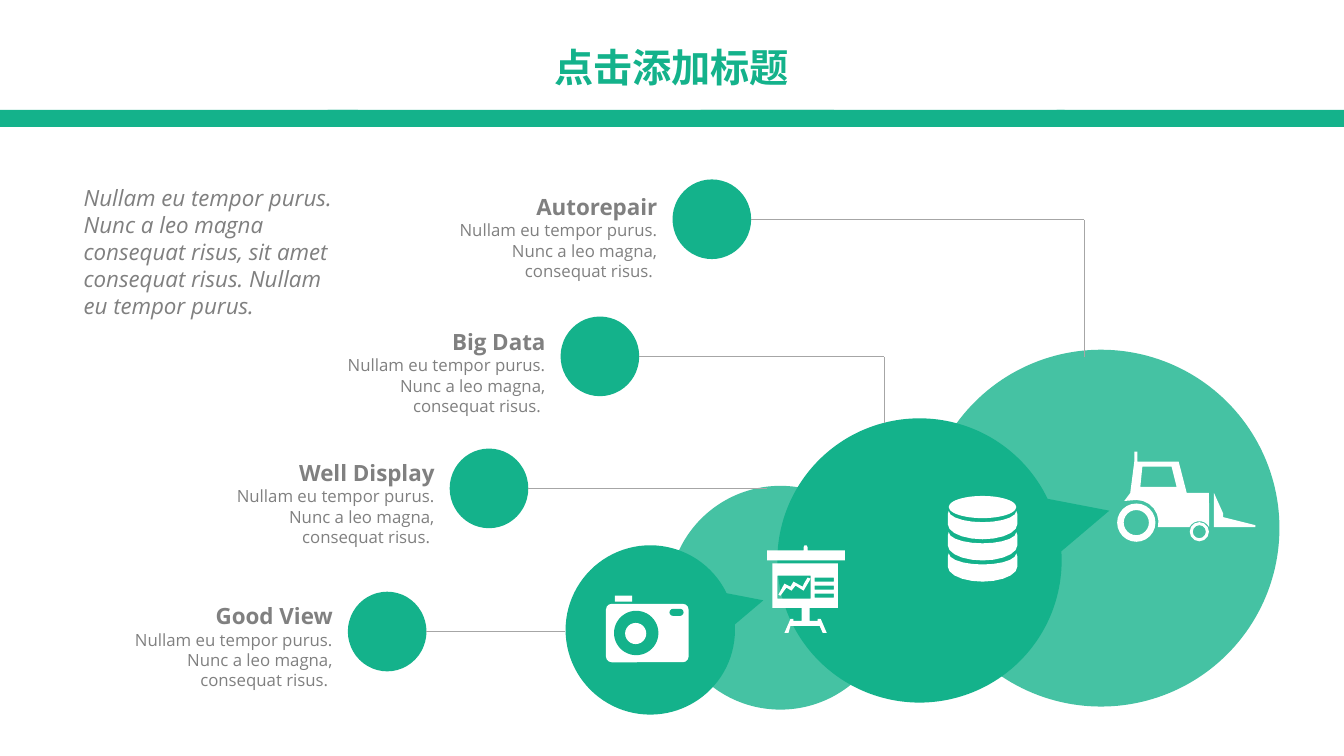
import math

import pptx
import pptx.dml.color
import pptx.enum.shapes
import pptx.enum.text
import pptx.oxml
import pptx.oxml.ns
import pptx.util

GREEN = pptx.dml.color.RGBColor(0x14, 0xB2, 0x8B)
WHITE = pptx.dml.color.RGBColor(0xFF, 0xFF, 0xFF)
GREY = pptx.dml.color.RGBColor(0x80, 0x80, 0x80)
LINE_GREY = pptx.dml.color.RGBColor(0xA6, 0xA6, 0xA6)
PRESET = pptx.enum.shapes.MSO_SHAPE
ALIGN = pptx.enum.text.PP_ALIGN
AUTO_SIZE = pptx.enum.text.MSO_AUTO_SIZE

TITLE = "点击添加标题"
INTRO = ("Nullam eu tempor purus. Nunc a leo magna consequat risus, "
         "sit amet consequat risus. Nullam eu tempor purus.")
DETAIL = "Nullam eu tempor purus. Nunc a leo magna, consequat risus. "

# Coordinates are in grid units of 2.54 cm.
BAR_PIECES = [(-0.01, 3.56), (3.25, 5.02), (6.95, 3.61), (10.48, 2.87)]  # left, width

# heading, dot left and top, text top, points the leader line runs through
TOPICS = [
    ("Autorepair", 6.67, 1.78, 1.62, [(10.75, 2.18), (10.75, 3.54)]),
    ("Big Data", 5.56, 3.14, 2.96, [(8.77, 3.54), (8.77, 4.2)]),
    ("Well Display", 4.46, 4.45, 4.26, [(7.61, 4.84)]),
    ("Good View", 3.45, 5.87, 5.68, [(5.6, 6.26)]),
]
DOT_WIDTH, DOT_HEIGHT = 0.78, 0.79

# centre x and y, radius, direction of the tail in degrees, opacity in percent
BUBBLES = [
    (10.92, 5.24, 1.77, 153.6, 79),
    (9.12, 5.56, 1.41, -14.7, 100),
    (7.74, 5.93, 1.11, -14.7, 79),
    (6.45, 6.25, 0.84, -14.7, 100),
]
TAIL_REACH = 0.69  # in bubble diameters

DISK_TOPS = [5.07, 5.28, 5.49]
TRACTOR_WHEELS = [(11.27, 5.185, 0.19, 0.125), (11.895, 5.275, 0.095, 0.065)]
PLOUGH = [(12.13, 5.13), (12.13, 5.09), (12.04, 4.89), (12.04, 5.23),
          (12.45, 5.23), (12.45, 5.21)]
CAB_WINDOW = [(11.33, 4.63), (11.62, 4.63), (11.67, 4.83), (11.31, 4.83)]
EASEL = [(8.31, 6.03), (8.31, 5.59), (7.66, 5.59), (7.66, 6.03), (7.95, 6.03),
         (7.95, 6.16), (7.87, 6.16), (7.87, 6.14), (7.84, 6.14), (7.78, 6.28),
         (7.82, 6.28), (7.84, 6.21), (8.13, 6.21), (8.16, 6.28), (8.2, 6.28),
         (8.14, 6.14), (8.11, 6.14), (8.11, 6.16), (8.03, 6.16), (8.03, 6.03)]
TREND = [(7.98, 5.78), (7.96, 5.82), (7.87, 5.77), (7.84, 5.82), (7.78, 5.79),
         (7.72, 5.9), (7.74, 5.91), (7.8, 5.83), (7.85, 5.86), (7.89, 5.81),
         (7.97, 5.86), (8.04, 5.74), (8.01, 5.73)]
RAIL = [(7.61, 5.46), (7.97, 5.46), (7.97, 5.43), (7.98, 5.41), (8, 5.41),
        (8.01, 5.43), (8.01, 5.46), (8.38, 5.46), (8.38, 5.56), (7.61, 5.56)]


def grid(value):
    """Turn grid units into a slide length."""
    return pptx.util.Cm(round(value * 2.54, 3))


def arc(x, y, rx, ry, start, end):
    """Points along an ellipse, angles running clockwise from the right."""
    steps = math.ceil(abs(end - start) / 18)
    angles = [math.radians(start + (end - start) * i / steps) for i in range(steps + 1)]
    return [(x + rx * math.cos(a), y + ry * math.sin(a)) for a in angles]


def box(left, top, right, bottom):
    return [(left, top), (right, top), (right, bottom), (left, bottom)]


def paint(shape, color, opacity=100):
    shape.shadow.inherit = False
    shape.fill.solid()
    shape.fill.fore_color.rgb = color
    shape.line.fill.background()
    if opacity < 100:
        rgb = shape._element.spPr.find(".//" + pptx.oxml.ns.qn("a:srgbClr"))
        rgb.append(pptx.oxml.parse_xml(
            f'<a:alpha {pptx.oxml.ns.nsdecls("a")} val="{opacity * 1000}"/>'))


def add_preset(slide, kind, left, top, width, height, color, adjust=(), opacity=100):
    shape = slide.shapes.add_shape(kind, *map(grid, (left, top, width, height)))
    for i, value in enumerate(adjust):
        shape.adjustments[i] = value
    paint(shape, color, opacity)


def add_outline(slide, *contours):
    """Draw one closed white shape; contours after the first are holes."""
    scaled = [[(grid(x), grid(y)) for x, y in contour] for contour in contours]
    builder = slide.shapes.build_freeform(*scaled[0][0])
    builder.add_line_segments(scaled[0][1:])
    for hole in scaled[1:]:
        builder.move_to(*hole[0])
        builder.add_line_segments(hole[1:])
    paint(builder.convert_to_shape(), WHITE)


def add_line(slide, start, end):
    line = slide.shapes.add_connector(
        pptx.enum.shapes.MSO_CONNECTOR.STRAIGHT, *map(grid, start + end))
    line.line.color.rgb = LINE_GREY
    line.line.width = pptx.util.Pt(0.5)
    line._element.spPr.append(
        pptx.oxml.parse_xml(f'<a:effectLst {pptx.oxml.ns.nsdecls("a")}/>'))


def write(frame, text, size=12, font="Open Sans", color=GREY, bold=False,
          italic=False, align=ALIGN.LEFT, spacing=1.0):
    """Add a paragraph, using the first one while it is still empty."""
    paragraph = frame.add_paragraph() if frame.text else frame.paragraphs[0]
    paragraph.alignment = align
    paragraph.line_spacing = spacing
    run = paragraph.add_run()
    run.text = text
    run.font.size = pptx.util.Pt(size)
    run.font.name = font
    run.font.color.rgb = color
    run.font.bold = bold
    run.font.italic = italic
    run.font._element.find(pptx.oxml.ns.qn("a:latin")).addnext(pptx.oxml.parse_xml(
        f'<a:ea {pptx.oxml.ns.nsdecls("a")} typeface="{font}"/>'))


def add_text_frame(slide, left, top, width, height):
    frame = slide.shapes.add_textbox(*map(grid, (left, top, width, height))).text_frame
    frame.word_wrap = True
    frame.auto_size = AUTO_SIZE.SHAPE_TO_FIT_TEXT
    frame.margin_left = frame.margin_right = grid(0.05)
    frame.margin_top = frame.margin_bottom = grid(0.03)
    return frame


def add_title(slide):
    title = slide.shapes.title
    title.left, title.top, title.width, title.height = map(grid, (2.78, 0.38, 7.76, 0.87))
    title.text_frame.auto_size = AUTO_SIZE.NONE
    title.text_frame.vertical_anchor = pptx.enum.text.MSO_ANCHOR.TOP
    write(title.text_frame, TITLE, size=28, font="Noto Sans CJK SC", color=GREEN,
          bold=True, align=ALIGN.CENTER)


def add_bubble(slide, x, y, radius, direction, opacity):
    angle = math.radians(direction)
    tip = (TAIL_REACH * math.cos(angle), TAIL_REACH * math.sin(angle))
    add_preset(slide, PRESET.OVAL_CALLOUT, x - radius, y - radius, 2 * radius,
               2 * radius, GREEN, tip, opacity)


def add_database(slide):
    for top in DISK_TOPS:
        upper = arc(9.745, top, 0.335, 0.11, 180, 0)
        lower = arc(9.745, top + 0.13, 0.345, 0.15, 0, 180)
        add_outline(slide, upper + [(10.09, top + 0.03)] + lower + [(9.4, top + 0.03)])
    add_preset(slide, PRESET.OVAL, 9.41, 4.92, 0.67, 0.22, WHITE)


def add_tractor(slide):
    body = [(11.69, 4.58), (11.28, 4.58), (11.28, 4.48), (11.25, 4.48), (11.25, 4.58),
            (11.21, 4.89), (11.15, 4.97)]
    body += arc(11.27, 5.18, 0.22, 0.22, -90, 13)
    body += arc(11.895, 5.28, 0.11, 0.11, 207, 333)
    body += [(11.99, 4.89), (11.77, 4.89)]
    add_outline(slide, body, CAB_WINDOW)
    add_outline(slide, PLOUGH)
    for x, y, tyre, hub in TRACTOR_WHEELS:
        add_preset(slide, PRESET.DONUT, x - tyre, y - tyre, 2 * tyre, 2 * tyre, WHITE,
                   [(tyre - hub) / (2 * tyre)])


def add_camera(slide):
    add_preset(slide, PRESET.ROUNDED_RECTANGLE, 6.01, 5.99, 0.82, 0.58, WHITE, [0.1])
    add_preset(slide, PRESET.ROUNDED_RECTANGLE, 6.64, 6.04, 0.14, 0.07, GREEN, [0.5])
    add_preset(slide, PRESET.RECTANGLE, 6.1, 5.91, 0.17, 0.06, WHITE)
    add_preset(slide, PRESET.OVAL, 6.09, 6.06, 0.44, 0.44, GREEN)
    add_preset(slide, PRESET.OVAL, 6.2, 6.18, 0.21, 0.21, WHITE)


def add_easel(slide):
    text_rows = [box(8.08, top, 8.27, top + 0.04) for top in (5.73, 5.81, 5.89)]
    add_outline(slide, RAIL)
    add_outline(slide, EASEL, *text_rows, box(7.71, 5.71, 8.04, 5.94))
    add_outline(slide, TREND)


def add_topic(slide, heading, left, top, text_top, stops):
    add_preset(slide, PRESET.OVAL, left, top, DOT_WIDTH, DOT_HEIGHT, GREEN)
    frame = add_text_frame(slide, left - 2.49, text_top, 2.39, 0.99)
    write(frame, heading, size=16, bold=True, align=ALIGN.RIGHT, spacing=2.0)
    write(frame, DETAIL, align=ALIGN.RIGHT)
    start = (left + DOT_WIDTH, stops[0][1])
    for stop in stops:
        add_line(slide, start, stop)
        start = stop


def main():
    deck = pptx.Presentation()
    deck.slide_width, deck.slide_height = grid(13.33), grid(7.5)
    slide = deck.slides.add_slide(deck.slide_layouts[5])
    for left, width in BAR_PIECES:
        add_preset(slide, PRESET.RECTANGLE, left, 1.09, width, 0.17, GREEN)
    add_title(slide)
    for bubble in BUBBLES:
        add_bubble(slide, *bubble)
    for add_icon in (add_database, add_tractor, add_camera, add_easel):
        add_icon(slide)
    for topic in TOPICS:
        add_topic(slide, *topic)
    write(add_text_frame(slide, 0.78, 1.8, 2.57, 1.4), INTRO, size=16, italic=True)
    deck.save("out.pptx")


if __name__ == "__main__":
    main()
